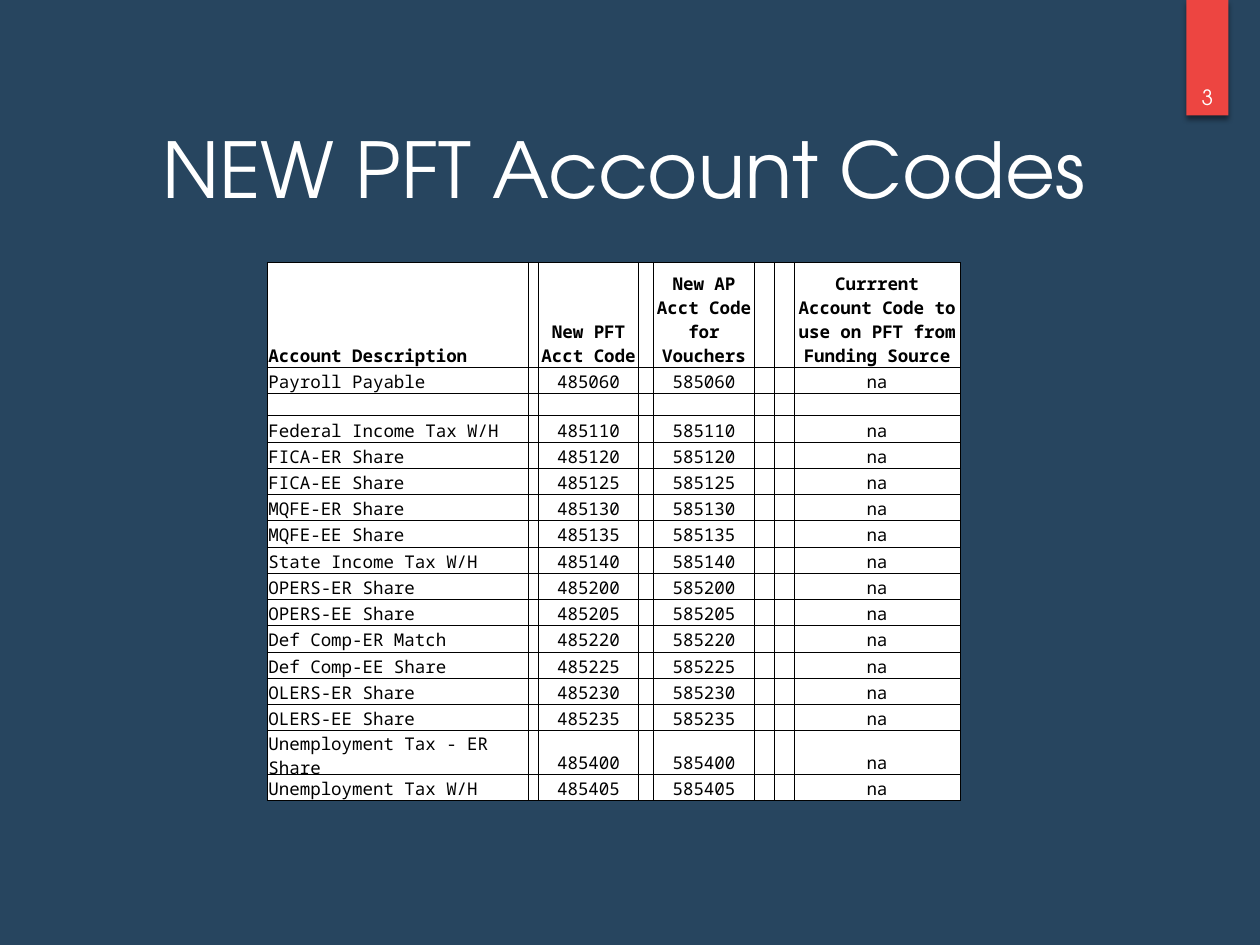
import lxml.etree
import pptx
import pptx.dml.color
import pptx.enum.shapes
import pptx.enum.text
import pptx.oxml
import pptx.oxml.ns
import pptx.util

Pt = pptx.util.Pt
ALIGN = pptx.enum.text.PP_ALIGN
ANCHOR = pptx.enum.text.MSO_ANCHOR
HEADING_FONT = "TeX Gyre Adventor"
TABLE_FONT = "Noto Sans Mono"
COLUMN_WIDTHS = [149, 5.8, 57.6, 8.4, 57.6, 11.4, 11.2, 95]
TEXT_COLUMNS = [0, 2, 4, 7]
HEADER_HEIGHT, ROW_HEIGHT, GAP_HEIGHT = 60, 15, 5
HEADINGS = [
    "Account Description",
    "New PFT Acct Code",
    "New AP Acct Code for Vouchers",
    "Currrent Account Code to use on PFT from Funding Source",
]
ACCOUNTS = [
    ("Payroll Payable", "060"),
    None,
    ("Federal Income Tax W/H", "110"),
    ("FICA-ER Share", "120"),
    ("FICA-EE Share", "125"),
    ("MQFE-ER Share", "130"),
    ("MQFE-EE Share", "135"),
    ("State Income Tax W/H", "140"),
    ("OPERS-ER Share", "200"),
    ("OPERS-EE Share", "205"),
    ("Def Comp-ER Match", "220"),
    ("Def Comp-EE Share", "225"),
    ("OLERS-ER Share", "230"),
    ("OLERS-EE Share", "235"),
    ("Unemployment Tax - ER Share", "400"),
    ("Unemployment Tax W/H", "405"),
]


def paint(color_holder, color):
    """Make a fill solid in the given hex colour."""
    color_holder.solid()
    color_holder.fore_color.rgb = pptx.dml.color.RGBColor.from_string(color)


def add_span(para, text, size, font, color, bold=False):
    """Add one formatted run to a paragraph."""
    span = para.add_run()
    span.text = text
    span.font.size = Pt(size)
    span.font.name = font
    span.font.bold = bold
    paint(span.font.fill, color)


def add_text_box(page, left, top, width, height):
    """Add a wrapping text box and return its frame."""
    frame = page.shapes.add_textbox(Pt(left), Pt(top), Pt(width), Pt(height)).text_frame
    frame.word_wrap = True
    return frame


def add_shadow(box):
    """Give a shape a soft shadow falling straight down."""
    namespace = pptx.oxml.ns.nsdecls("a")
    box._element.spPr.append(pptx.oxml.parse_xml(
        f'<a:effectLst {namespace}><a:outerShdw blurRad="{Pt(3)}" dist="{Pt(2)}" '
        'dir="5400000" rotWithShape="0"><a:srgbClr val="000000">'
        '<a:alpha val="45000"/></a:srgbClr></a:outerShdw></a:effectLst>'
    ))


def add_page_tab(page, left, top, width, height):
    """Draw the red tab with the page number at its foot."""
    tab = page.shapes.add_shape(
        pptx.enum.shapes.MSO_SHAPE.RECTANGLE, Pt(left), Pt(top), Pt(width), Pt(height)
    )
    paint(tab.fill, "ED4541")
    tab.line.fill.background()
    add_shadow(tab)
    number_height = 39.4
    frame = add_text_box(page, left, top + height - number_height + 0.4, width, number_height)
    frame.margin_left = frame.margin_right = 0
    frame.vertical_anchor = ANCHOR.BOTTOM
    para = frame.paragraphs[0]
    para.alignment = ALIGN.CENTER
    add_span(para, "3", 12, HEADING_FONT, "FFFFFF")


def add_title(page, left, top, width, height):
    """Write the slide title."""
    frame = add_text_box(page, left, top, width, height)
    frame.auto_size = pptx.enum.text.MSO_AUTO_SIZE.SHAPE_TO_FIT_TEXT
    add_span(frame.paragraphs[0], "NEW PFT Account Codes", 44, HEADING_FONT, "FFFFFF")


def add_borders(cell):
    """Draw thin black lines on all four sides of a cell."""
    properties = cell._tc.get_or_add_tcPr()
    namespace = pptx.oxml.ns.nsdecls("a")
    for position, side in enumerate(["lnL", "lnR", "lnT", "lnB"]):
        properties.insert(position, pptx.oxml.parse_xml(
            f'<a:{side} {namespace} w="{Pt(0.5)}"><a:solidFill>'
            f'<a:srgbClr val="000000"/></a:solidFill></a:{side}>'
        ))


def fill_cell(cell, text, centred, bold):
    """Format a cell and write its text, if it has any."""
    paint(cell.fill, "FFFFFF")
    add_borders(cell)
    cell.margin_left = cell.margin_right = cell.margin_top = Pt(0.72)
    cell.margin_bottom = 0
    cell.vertical_anchor = ANCHOR.BOTTOM
    para = cell.text_frame.paragraphs[0]
    if text:
        para.alignment = ALIGN.CENTER if centred else ALIGN.LEFT
        add_span(para, text, 10, TABLE_FONT, "000000", bold)
    else:
        lxml.etree.SubElement(para._p, pptx.oxml.ns.qn("a:endParaRPr"), sz="1000")


def add_account_table(page, left, top, width, height):
    """Build the table of account codes."""
    rows = [HEADINGS]
    for account in ACCOUNTS:
        rows.append([account[0], "485" + account[1], "585" + account[1], "na"] if account else [])
    holder = page.shapes.add_table(
        len(rows), len(COLUMN_WIDTHS), Pt(left), Pt(top), Pt(width), Pt(height)
    )
    table = holder.table
    table.first_row = table.horz_banding = False
    for column, column_width in zip(table.columns, COLUMN_WIDTHS):
        column.width = Pt(column_width)
    for row_index, (row, values) in enumerate(zip(table.rows, rows)):
        is_header = row_index == 0
        row.height = Pt(HEADER_HEIGHT if is_header else ROW_HEIGHT if values else GAP_HEIGHT)
        texts = dict(zip(TEXT_COLUMNS, values))
        for column_index, cell in enumerate(row.cells):
            fill_cell(cell, texts.get(column_index), column_index > 0, is_header)
    holder.height = Pt(height)


def main():
    """Build the slide and save the deck."""
    deck = pptx.Presentation()
    deck.slide_width, deck.slide_height = Pt(720), Pt(540)
    page = deck.slides.add_slide(deck.slide_layouts[6])
    paint(page.background.fill, "27455F")
    add_page_tab(page, 678, 0, 24, 66)
    add_title(page, 85.7, 66, 568, 60.5)
    add_account_table(page, 152.7, 149.9, 396, 298)
    deck.save("out.pptx")


if __name__ == "__main__":
    main()
